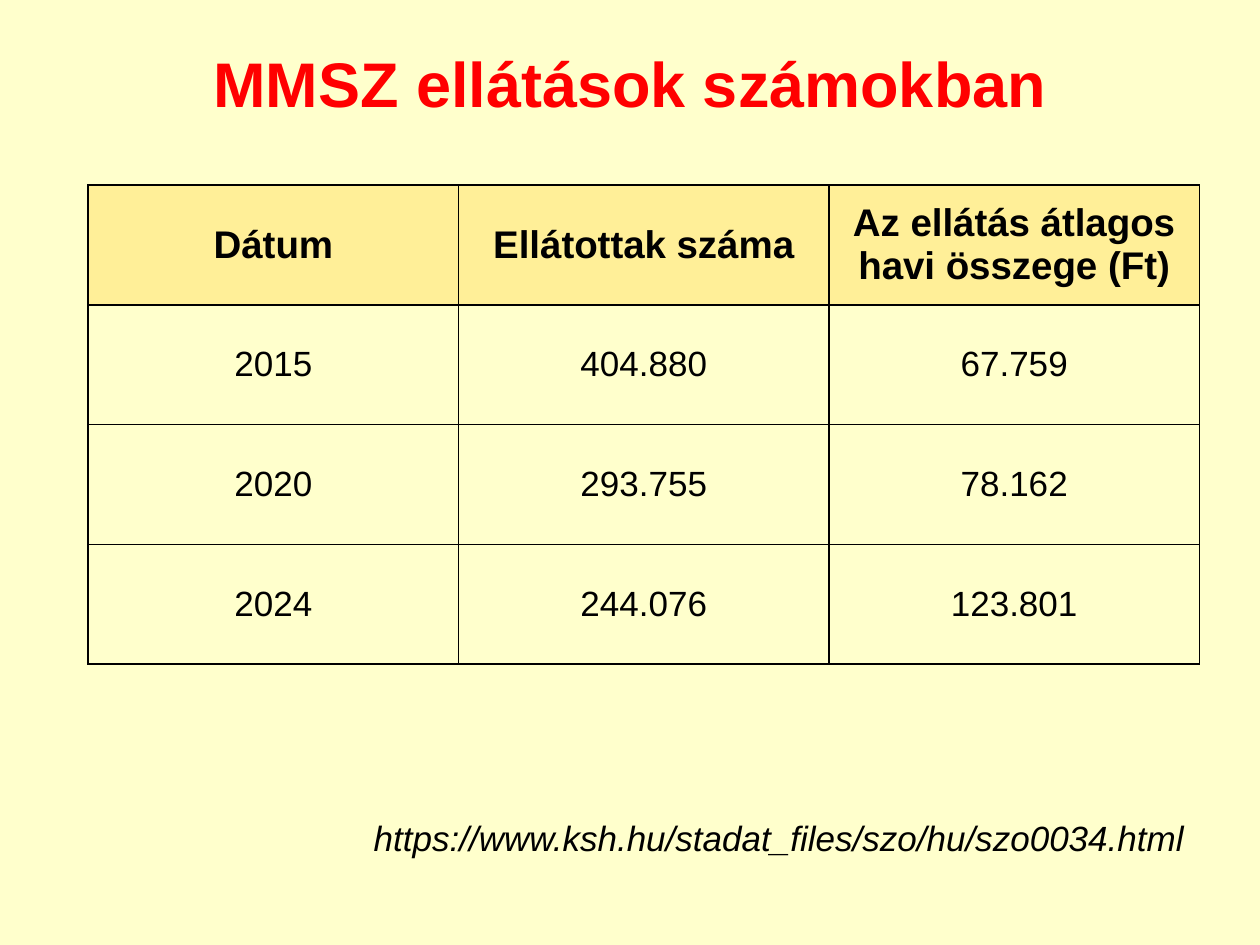
from dataclasses import dataclass

from lxml.etree import SubElement
from pptx import Presentation
from pptx.dml.color import RGBColor
from pptx.enum.text import MSO_ANCHOR as Anchor, PP_ALIGN as Align
from pptx.oxml import parse_xml
from pptx.oxml.ns import qn
from pptx.util import Inches, Pt

WIDE, HIGH = 10, 7.5
CREAM, RED, BLACK, AMBER = "FFFFCC", "FF0000", "000000", "FFC000"
NS = "http://schemas.openxmlformats.org/drawingml/2006/main"
ROWS = [
    ("Dátum", "Ellátottak száma", "Az ellátás átlagos havi összege (Ft)"),
    ("2015", "404.880", "67.759"),
    ("2020", "293.755", "78.162"),
    ("2024", "244.076", "123.801"),
]


@dataclass(frozen=True)
class Style:
    size: int
    hue: str = BLACK
    bold: bool = False
    italic: bool = False
    align: Align = Align.CENTER
    anchor: Anchor = Anchor.MIDDLE


@dataclass(frozen=True)
class Label:
    """Text in a box whose place is given as shares of the slide."""
    text: str
    left: float
    top: float
    width: float
    height: float
    style: Style
    before: int = 0
    after: int = 0


HEAD = Style(22, bold=True)
BODY = Style(20)
LABELS = [
    Label("MMSZ ellátások számokban", 0, -0.015, 1, 0.204,
          Style(36, RED, bold=True)),
    Label("https://www.ksh.hu/stadat_files/szo/hu/szo0034.html",
          0.028, 0.857, 0.922, 0.063,
          Style(20, italic=True, align=Align.RIGHT, anchor=Anchor.TOP), 1, 5),
]


def paint(color, code: str) -> None:
    color.rgb = RGBColor.from_string(code)


def write(frame, text: str, style: Style):
    frame.word_wrap = True
    para = frame.paragraphs[0]
    para.alignment = style.align
    run = para.add_run()
    run.text = text
    form = {"name": "Arial", "size": Pt(style.size),
            "bold": style.bold, "italic": style.italic}
    for key, value in form.items():
        setattr(run.font, key, value)
    paint(run.font.color, style.hue)
    return para


def add_label(slide, label: Label) -> None:
    box = slide.shapes.add_textbox(
        Inches(label.left * WIDE), Inches(label.top * HIGH),
        Inches(label.width * WIDE), Inches(label.height * HIGH))
    box.text_frame.vertical_anchor = label.style.anchor
    para = write(box.text_frame, label.text, label.style)
    para.space_before, para.space_after = Pt(label.before), Pt(label.after)


def rule(cell) -> None:
    """Draw a thin black line on each side of the cell."""
    props = cell._tc.get_or_add_tcPr()
    for spot, side in enumerate(("lnL", "lnR", "lnT", "lnB")):
        props.insert(spot, parse_xml(
            f'<a:{side} xmlns:a="{NS}" w="{Pt(1)}"><a:solidFill>'
            f'<a:srgbClr val="{BLACK}"/></a:solidFill></a:{side}>'))


def tint(cell, code: str, share: int) -> None:
    """Fill the cell with a colour of the given opacity in percent."""
    cell.fill.solid()
    paint(cell.fill.fore_color, code)
    color = cell._tc.tcPr.find(f"{qn('a:solidFill')}/{qn('a:srgbClr')}")
    SubElement(color, qn("a:alpha"), val=str(share * 1000))


def add_grid(slide, rows: list, col: float, row: float) -> None:
    wide = len(rows[0])
    table = slide.shapes.add_table(
        len(rows), wide, Inches(0.7), Inches(1.47),
        Inches(col * wide), Inches(row * len(rows))).table
    table.first_row = table.horz_banding = False
    for r, texts in enumerate(rows):
        for c, text in enumerate(texts):
            cell = table.cell(r, c)
            style = BODY if r else HEAD
            cell.vertical_anchor = style.anchor
            write(cell.text_frame, text, style)
            if r:
                cell.fill.background()
            else:
                tint(cell, AMBER, 25)
            rule(cell)


def main() -> None:
    deck = Presentation()
    deck.slide_width, deck.slide_height = Inches(WIDE), Inches(HIGH)
    slide = deck.slides.add_slide(deck.slide_layouts[6])
    slide.background.fill.solid()
    paint(slide.background.fill.fore_color, CREAM)
    add_grid(slide, ROWS, 2.94, 0.95)
    for label in LABELS:
        add_label(slide, label)
    deck.save("out.pptx")


if __name__ == "__main__":
    main()
